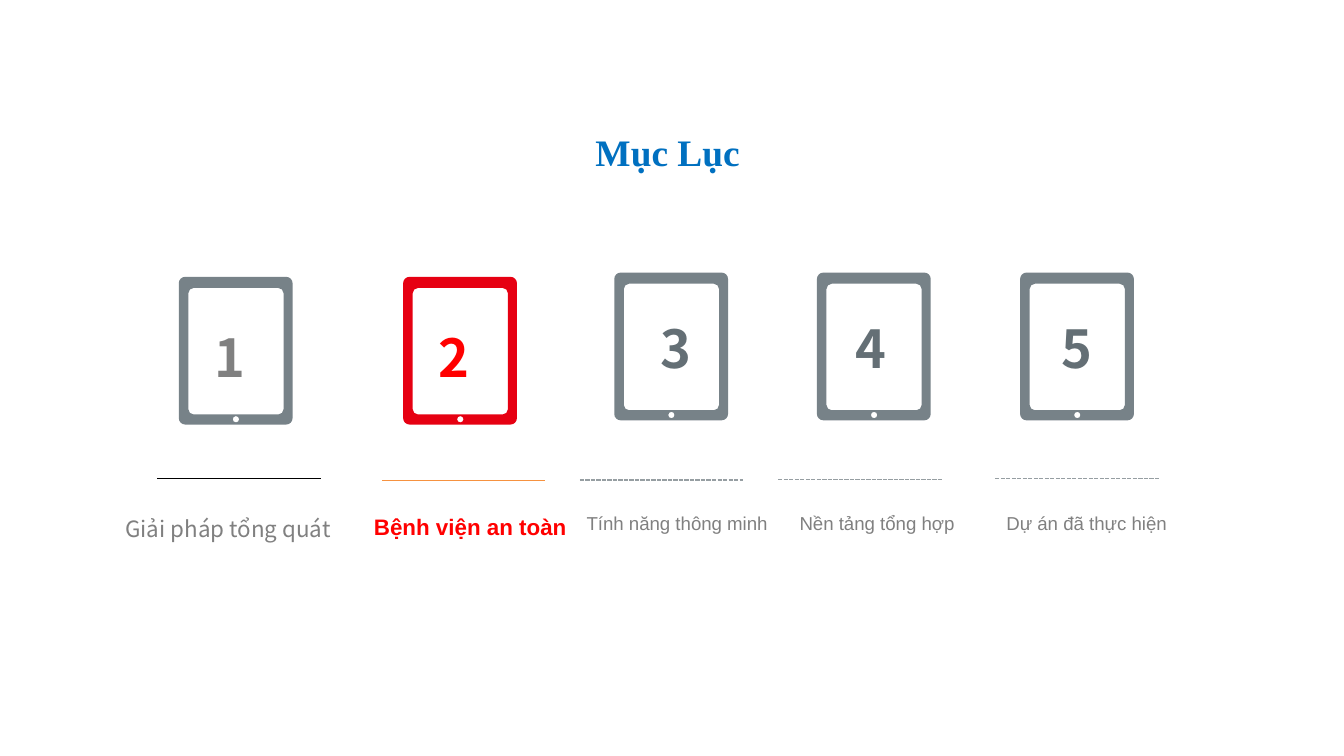
from lxml.etree import SubElement
from pptx import Presentation
from pptx.dml.color import RGBColor
from pptx.enum.dml import MSO_LINE
from pptx.enum.shapes import MSO_CONNECTOR
from pptx.enum.text import MSO_ANCHOR, MSO_AUTO_SIZE, PP_ALIGN
from pptx.oxml.ns import qn
from pptx.util import Cm, Pt

BLUE = RGBColor(0x00, 0x70, 0xC0)
RED = RGBColor(0xFF, 0x00, 0x00)
TABLET_RED = RGBColor(0xE6, 0x00, 0x12)
TABLET_GRAY = RGBColor(0x77, 0x82, 0x88)
DARK_GRAY = RGBColor(0x64, 0x6F, 0x75)
GRAY = RGBColor(0x80, 0x80, 0x80)
LINE_GRAY = RGBColor(0x96, 0x9E, 0xA2)
ORANGE = RGBColor(0xF6, 0x92, 0x40)
BLACK = RGBColor(0x00, 0x00, 0x00)

NOTO = "Noto Sans CJK SC"
ARIAL = "Arial"
TIMES = "Times New Roman"
LEFT, CENTER = PP_ALIGN.LEFT, PP_ALIGN.CENTER


def rounded_outline(x, y, w, h, r):
    k = 0.45 * r
    right, bottom = x + w, y + h
    points = [
        (right, bottom - r), (right, bottom - k), (right - k, bottom), (right - r, bottom),
        (x + r, bottom), (x + k, bottom), (x, bottom - k), (x, bottom - r),
        (x, y + r), (x, y + k), (x + k, y), (x + r, y),
        (right - r, y), (right - k, y), (right, y + k), (right, y + r),
    ]
    if 2 * r == w:
        points = [p for i, p in enumerate(points) if i == 0 or i % 4]
    return [(Cm(px), Cm(py)) for px, py in points]


def curve_corners(sp):
    for move in list(sp._element.iter(qn("a:moveTo"))):
        lines = []
        node = move.getnext()
        while node.tag == qn("a:lnTo"):
            lines.append(node)
            node = node.getnext()
        step = 3 if len(lines) == 12 else 4
        for i in range(0, len(lines), step):
            first, *others = lines[i:i + 3]
            first.tag = qn("a:cubicBezTo")
            curve = first.makeelement(qn("a:cubicBezTo"))
            first.addprevious(curve)
            for line in (first, *others):
                curve.append(line[0])
                line.getparent().remove(line)


class SlideBuilder:
    def __init__(self, s):
        self.s = s

    def format_text(self, sp, text, size, font, color, bold, align, spacing):
        tf = sp.text_frame
        tf.text = text
        tf.word_wrap = True
        tf.auto_size = MSO_AUTO_SIZE.SHAPE_TO_FIT_TEXT
        tf.vertical_anchor = MSO_ANCHOR.TOP
        p = tf.paragraphs[0]
        p.alignment = align
        p.line_spacing = spacing
        p.space_before = Pt(0)
        r = p.runs[0]
        r.font.size = Pt(size)
        r.font.name = font
        r.font.bold = bold
        r.font.color.rgb = color

    def title(self, text, x, y, w, h):
        sp = self.s.shapes.title
        sp.left, sp.top, sp.width, sp.height = Cm(x), Cm(y), Cm(w), Cm(h)
        self.format_text(sp, text, 20, TIMES, BLUE, True, LEFT, 1.3)

    def text(self, text, x, y, w, h, size, font, color,
             bold=False, align=LEFT, spacing=1.3):
        sp = self.s.shapes.add_textbox(Cm(x), Cm(y), Cm(w), Cm(h))
        self.format_text(sp, text, size, font, color, bold, align, spacing)

    def tablet(self, x, y, color):
        outlines = [
            rounded_outline(x + 1.02, y + 2.63, 0.12, 0.12, 0.06),
            rounded_outline(x + 0.18, y + 0.21, 1.8, 2.39, 0.1),
            rounded_outline(x, y, 2.15, 2.79, 0.12),
        ]
        builder = self.s.shapes.build_freeform(*outlines[0][0], scale=1.0)
        for i, outline in enumerate(outlines):
            if i:
                builder.move_to(*outline[0])
            builder.add_line_segments(outline[1:], close=True)
        sp = builder.convert_to_shape()
        curve_corners(sp)
        sp.shadow.inherit = False
        sp.fill.solid()
        sp.fill.fore_color.rgb = color
        sp.line.fill.background()

    def rule(self, x, y, color, dash=None):
        line = self.s.shapes.add_connector(
            MSO_CONNECTOR.STRAIGHT, Cm(x), Cm(y), Cm(x + 3.09), Cm(y))
        line.line.color.rgb = color
        line.line.width = Pt(0.75)
        if dash:
            line.line.dash_style = dash
        SubElement(line._element.spPr, qn("a:effectLst"))


def main():
    prs = Presentation()
    prs.slide_width, prs.slide_height = Cm(25.4), Cm(14.28)
    b = SlideBuilder(prs.slides.add_slide(prs.slide_layouts[5]))
    b.title("Mục Lục", 11, 2.06, 3.73, 1.27)

    for text, x, w, h, size, font, color, bold, align, spacing in [
        ("Giải pháp tổng quát", 2.12, 5, 0.91, 12, NOTO, GRAY, False, LEFT, 1.3),
        ("Bệnh viện an toàn", 6.77, 4.24, 0.86, 12, ARIAL, RED, True, CENTER, 1.2),
        ("Tính năng thông minh", 10.79, 4.01, 0.76, 10, ARIAL, GRAY, False, CENTER, 1.2),
        ("Nền tảng tổng hợp", 14.81, 3.53, 0.76, 10, ARIAL, GRAY, False, CENTER, 1.2),
        ("Dự án đã thực hiện", 18.63, 3.81, 0.76, 10, ARIAL, GRAY, False, CENTER, 1.2),
    ]:
        b.text(text, x, 9.46, w, h, size, font, color, bold, align, spacing)

    for number, (x, y, w, h, color) in enumerate([
        (3.81, 5.66, 2.72, 1.65, GRAY),
        (8.04, 5.66, 2.72, 1.65, RED),
        (12.23, 5.49, 1.55, 1.75, DARK_GRAY),
        (15.92, 5.49, 1.55, 1.75, DARK_GRAY),
        (19.81, 5.49, 1.55, 1.75, DARK_GRAY),
    ], 1):
        b.text(str(number), x, y, w, h, 28, NOTO, color, True)

    for x, y, color in [
        (3.38, 5.23, TABLET_GRAY),
        (7.62, 5.23, TABLET_RED),
        (11.61, 5.15, TABLET_GRAY),
        (15.44, 5.15, TABLET_GRAY),
        (19.28, 5.15, TABLET_GRAY),
    ]:
        b.tablet(x, y, color)

    for x, y, color, dash in [
        (2.97, 9.04, BLACK, None),
        (7.22, 9.08, ORANGE, None),
        (10.96, 9.07, LINE_GRAY, MSO_LINE.SQUARE_DOT),
        (14.71, 9.06, LINE_GRAY, MSO_LINE.SQUARE_DOT),
        (18.81, 9.04, LINE_GRAY, MSO_LINE.SQUARE_DOT),
    ]:
        b.rule(x, y, color, dash)

    prs.save("out.pptx")


if __name__ == "__main__":
    main()
